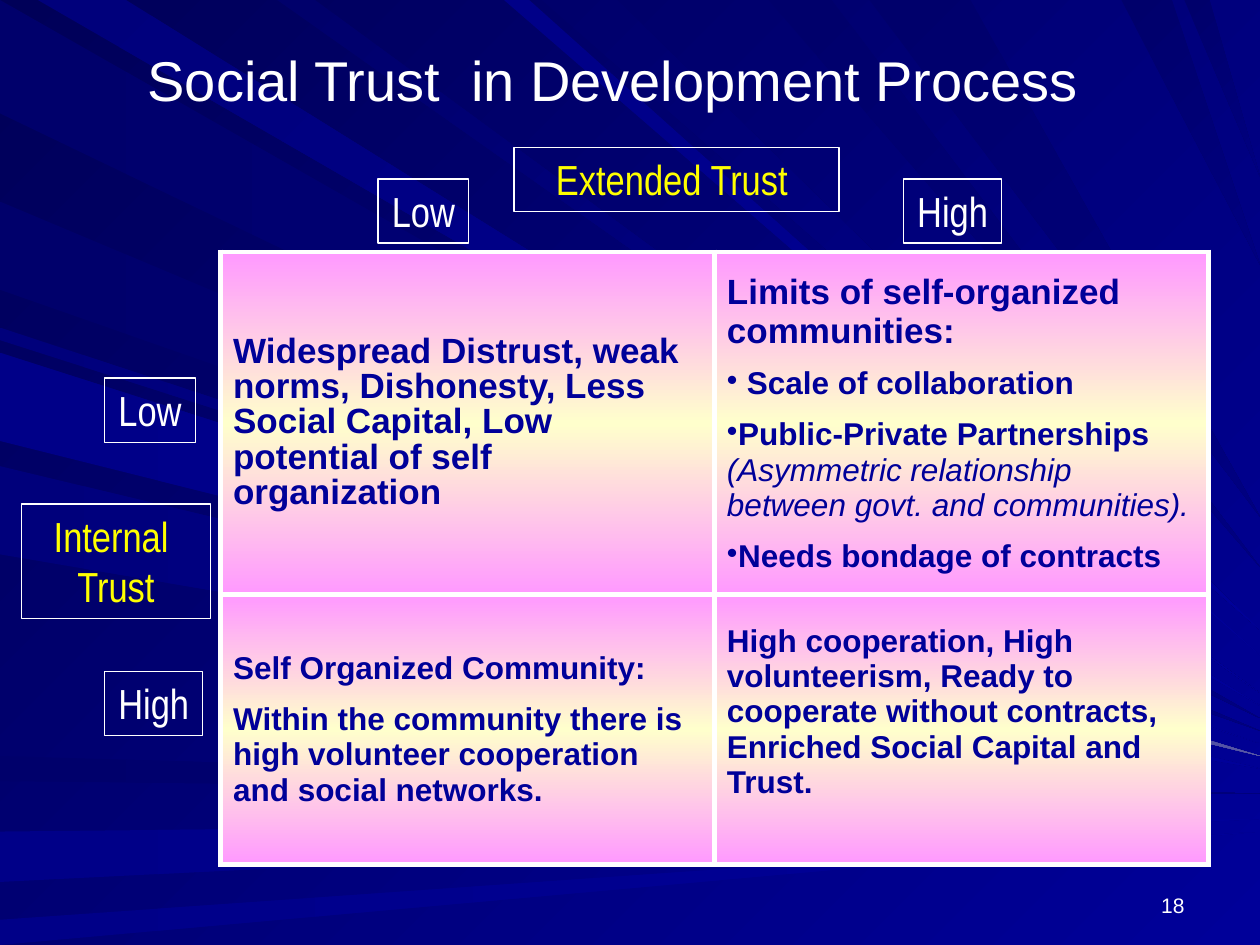
"""Build a slide with a two-by-two matrix of internal and extended social trust."""
import copy

import pptx
import pptx.dml.color
import pptx.enum.text
import pptx.oxml
import pptx.oxml.ns
import pptx.util

Inches, Pt = pptx.util.Inches, pptx.util.Pt
ALIGN, ANCHOR = pptx.enum.text.PP_ALIGN, pptx.enum.text.MSO_ANCHOR
WHITE, YELLOW, NAVY = "FFFFFF", "FFFF00", "000099"
DARK, MID, LIGHT, DEEP, GLOW = "00006B", "00007B", "000088", "000080", "5A5AA6"
CELL_STOPS = ("FF99FF", "FFFFCC", "FF99FF")
WIDTH, HEIGHT = 10, 7.5

TITLE = "Social Trust  in Development Process"
PAGE = "18"

# Edge, start and end along that edge, tip height at the right side, colours
BEAMS = [
    ("left", 0, 0.9, 5.7, DARK, DEEP),
    ("top", 0.3, 1, 5.6, MID, NAVY),
    ("left", 6, 6.2, 6.3, DARK, DEEP),
    ("left", 6.6, 7, 6.5, LIGHT, NAVY),
    ("left", 7.3, 7.5, 6.6, LIGHT, NAVY),
    ("left", 2.6, 2.7, 5.9, MID, NAVY),
    ("left", 1.6, 2.3, 5.8, DARK, DEEP),
    ("top", 4, 4.2, 5.2, LIGHT, NAVY),
    ("top", 4.3, 4.9, 5, DARK, NAVY),
    ("top", 6.1, 6.6, 4.5, DARK, DEEP),
    ("top", 8.9, 9.3, 2.1, DARK, DEEP),
    ("top", 9.4, 9.6, 1.4, DARK, DEEP),
    ("left", 2.8, 3.4, 6, MID, NAVY),
    ("left", 3.7, 4.4, 6.1, MID, NAVY),
    ("top", 2.2, 2.5, 5.5, DARK, NAVY),
    ("top", 6.9, 7.7, 4.1, DARK, DEEP),
    ("left", 2.8, 3.5, 6, LIGHT, NAVY),
]
GLEAM = [(6.4, 4.9), (6.3, 5.1), (WIDTH, 6)]

LABELS = [
    ("Extended Trust ", YELLOW, True, (4.08, 1.17, 2.58, 0.51)),
    ("Low", WHITE, False, (3, 1.42, 0.72, 0.51)),
    ("High", WHITE, False, (7.17, 1.42, 0.78, 0.51)),
    ("Internal \nTrust", YELLOW, True, (0.17, 4, 1.5, 0.91)),
    ("Low", WHITE, False, (0.83, 3, 0.72, 0.51)),
    ("High", WHITE, False, (0.83, 5.33, 0.78, 0.51)),
]

# Each paragraph: bold text, italic text, size, bulleted
CELLS = [
    [[("Widespread Distrust, weak norms, Dishonesty, Less Social Capital, "
       "Low potential of self organization", "", 20, False)],
     [("Limits of self-organized communities:", "", 20, False),
      (" Scale of collaboration", "", 18, True),
      ("Public-Private Partnerships ",
       "(Asymmetric relationship between govt. and communities).", 18, True),
      ("Needs bondage of contracts", "", 18, True)]],
    [[("Self Organized Community:", "", 18, False),
      ("Within the community there is high volunteer cooperation and social networks.",
       "", 18, False)],
     [("High cooperation, High volunteerism, Ready to cooperate without contracts, "
       "Enriched Social Capital and Trust.", "", 18, False)]],
]
COL_W, ROW_H = 3.92, (2.72, 2.14)


def rgb(value):
    return pptx.dml.color.RGBColor.from_string(value)


def paint(fill, parent, colours, angle):
    fill.gradient()
    fill.gradient_angle = (360 - angle) % 360
    first = parent.xpath(".//a:gradFill/a:gsLst/a:gs")[0]
    for _ in colours[2:]:
        first.addnext(copy.deepcopy(first))
    for i, (stop, colour) in enumerate(zip(fill.gradient_stops, colours)):
        stop.position = i / (len(colours) - 1)
        stop.color.rgb = rgb(colour)


def style(p, size, colour, font="Arial", align=None):
    p.alignment = align
    for r in p.runs:
        r.font.size, r.font.name = Pt(size), font
        r.font.color.rgb = rgb(colour)


def add_ray(s, points, colours, angle):
    outline = [(Inches(x), Inches(y)) for x, y in points]
    builder = s.shapes.build_freeform(*outline[0])
    builder.add_line_segments(outline[1:], close=True)
    sp = builder.convert_to_shape()
    sp.shadow.inherit = False
    sp.line.fill.background()
    paint(sp.fill, sp._element.spPr, colours, angle)


def add_rays(s):
    for edge, start, end, tip, *colours in BEAMS:
        base = [(0, v) if edge == "left" else (v, 0) for v in (start, end)]
        add_ray(s, base + [(WIDTH, tip)], colours, 0 if edge == "left" else 45)
    add_ray(s, GLEAM, (NAVY, GLOW), 0)


def add_borders(tcPr):
    for side in ("lnL", "lnR", "lnT", "lnB"):
        tcPr.append(pptx.oxml.parse_xml(
            f'<a:{side} {pptx.oxml.ns.nsdecls("a")} w="{Pt(3)}"><a:solidFill>'
            f'<a:srgbClr val="{WHITE}"/></a:solidFill></a:{side}>'))


def add_bullet(p):
    pPr = p._p.get_or_add_pPr()
    pPr.set("marL", "0")
    pPr.set("indent", "0")
    pPr.append(pptx.oxml.parse_xml(f'<a:buChar {pptx.oxml.ns.nsdecls("a")} char="•"/>'))


def fill_cell(cell, paragraphs):
    tcPr = cell._tc.get_or_add_tcPr()
    add_borders(tcPr)
    paint(cell.fill, tcPr, CELL_STOPS, 90)
    cell.vertical_anchor = ANCHOR.MIDDLE
    tf = cell.text_frame
    for i, (bold, italic, size, bulleted) in enumerate(paragraphs):
        p = tf.add_paragraph() if i else tf.paragraphs[0]
        if bulleted:
            add_bullet(p)
        if i:
            p.space_before = Pt(size / 2)
        for text, is_italic in ((bold, False), (italic, True)):
            if text:
                r = p.add_run()
                r.text = text
                r.font.bold, r.font.italic = not is_italic, is_italic
        style(p, size, NAVY)


def add_matrix(s):
    frame = s.shapes.add_table(2, 2, Inches(1.75), Inches(2), Inches(2 * COL_W), Inches(sum(ROW_H)))
    table = frame.table
    table.first_row = table.horz_banding = False
    for i, height in enumerate(ROW_H):
        table.columns[i].width = Inches(COL_W)
        table.rows[i].height = Inches(height)
        for j, paragraphs in enumerate(CELLS[i]):
            fill_cell(table.cell(i, j), paragraphs)
    table.cell(0, 0).text_frame.paragraphs[0].line_spacing = 0.9
    table.cell(1, 1).margin_bottom = Inches(0.33)


def add_label(s, text, colour, wrap, box):
    sp = s.shapes.add_textbox(*map(Inches, box))
    sp.line.color.rgb, sp.line.width = rgb(WHITE), Pt(0.75)
    tf = sp.text_frame
    tf.word_wrap = wrap
    tf.text = text
    for p in tf.paragraphs:
        style(p, 24, colour, "Arial Narrow", ALIGN.CENTER)


def main():
    prs = pptx.Presentation()
    prs.slide_width, prs.slide_height = Inches(WIDTH), Inches(HEIGHT)
    s = prs.slides.add_slide(prs.slide_layouts[5])
    paint(s.background.fill, s._element, ("000058", NAVY), 45)
    add_rays(s)

    number = s.shapes.add_textbox(Inches(7.17), Inches(6.83), Inches(2.33), Inches(0.5))
    tf = number.text_frame
    tf.word_wrap = True
    tf.vertical_anchor = ANCHOR.BOTTOM
    tf.text = PAGE
    style(tf.paragraphs[0], 12, WHITE, align=ALIGN.RIGHT)

    title = s.shapes.title
    s.shapes._spTree.append(title._element)
    title.left, title.top, title.width, title.height = map(Inches, (0.58, 0.25, 8.58, 0.75))
    tf = title.text_frame
    tf.text = TITLE
    tf.vertical_anchor = ANCHOR.MIDDLE
    style(tf.paragraphs[0], 32, WHITE, align=ALIGN.CENTER)

    add_matrix(s)
    for label in LABELS:
        add_label(s, *label)
    prs.save("out.pptx")


if __name__ == "__main__":
    main()
